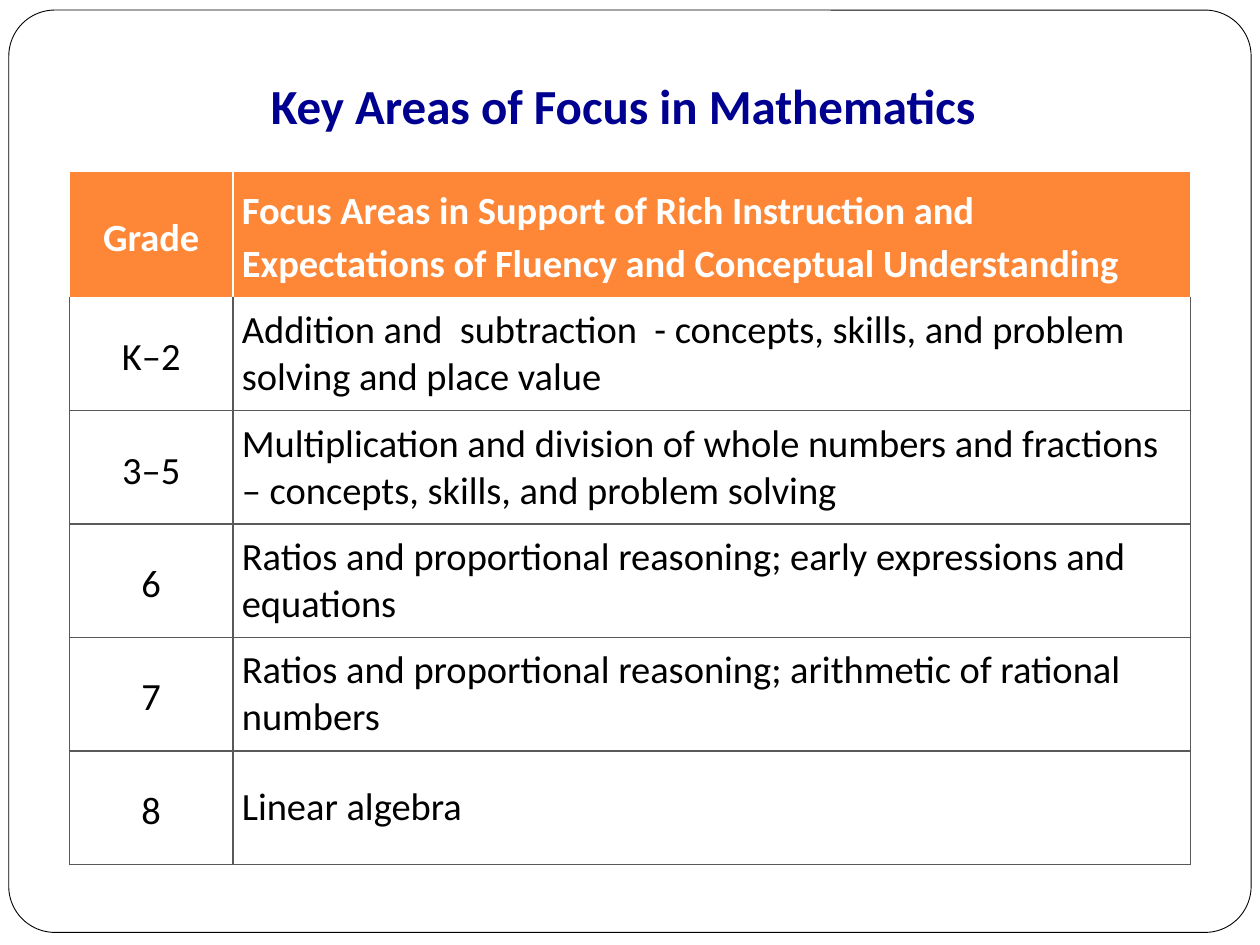
import pptx
import pptx.util
import pptx.dml.color
import pptx.enum.shapes
import pptx.enum.text
from lxml import etree

TITLE = "Key Areas of Focus in Mathematics"
HEADINGS = (
    "Grade",
    "Focus Areas in Support of Rich Instruction and Expectations of Fluency and Conceptual Understanding",
)
FOCUS_AREAS = [
    ("K–2", "Addition and  subtraction  - concepts, skills, and problem solving and place value"),
    ("3–5", "Multiplication and division of whole numbers and fractions – concepts, skills, and problem solving"),
    ("6", "Ratios and proportional reasoning; early expressions and equations"),
    ("7", "Ratios and proportional reasoning; arithmetic of rational numbers"),
    ("8", "Linear algebra"),
]
COLORS = {
    "title": "000090",
    "header": "FE8637",
    "paper": "FFFFFF",
    "ink": "000000",
    "grid": "595959",
}
FONT = "Calibri"
COLUMN_WIDTHS = (1.3, 7.6)
ROW_HEIGHTS = (1.0,) + (0.9,) * len(FOCUS_AREAS)
Inches, Pt = pptx.util.Inches, pptx.util.Pt
ALIGN = pptx.enum.text.PP_ALIGN
ANCHOR = pptx.enum.text.MSO_ANCHOR


def rgb(name):
    return pptx.dml.color.RGBColor.from_string(COLORS[name])


def style_font(font, size, color, bold):
    font.name = FONT
    font.size = Pt(size)
    font.bold = bold
    font.color.rgb = rgb(color)


def set_borders(cell, colors):
    ns = "http://schemas.openxmlformats.org/drawingml/2006/main"
    properties = cell._tc.get_or_add_tcPr()
    for side, color in colors.items():
        border = etree.SubElement(properties, f"{{{ns}}}ln{side}", w=str(Pt(1)))
        fill = etree.SubElement(border, f"{{{ns}}}solidFill")
        etree.SubElement(fill, f"{{{ns}}}srgbClr", val=COLORS[color])


def add_title(slide):
    title = slide.shapes.title
    title.left, title.top = Inches(0.53), Inches(0.55)
    title.width, title.height = Inches(8.83), Inches(0.57)
    frame = title.text_frame
    frame.text = TITLE
    frame.vertical_anchor = ANCHOR.TOP
    frame.auto_size = pptx.enum.text.MSO_AUTO_SIZE.SHAPE_TO_FIT_TEXT
    frame.paragraphs[0].alignment = ALIGN.CENTER
    style_font(frame.paragraphs[0].font, 28, "title", True)


def add_page_frame(slide):
    page = slide.shapes.add_shape(
        pptx.enum.shapes.MSO_SHAPE.ROUNDED_RECTANGLE,
        Inches(0.07), Inches(0.08), Inches(9.86), Inches(7.32),
    )
    page.adjustments[0] = 0.05
    page.shadow.inherit = False
    page.fill.solid()
    page.fill.fore_color.rgb = rgb("paper")
    page.line.color.rgb = rgb("ink")
    page.line.width = Pt(0.5)
    slide.shapes.title.element.addprevious(page.element)


def fill_cell(cell, text, row, column):
    is_header = row == 0
    edge = "paper" if is_header else "grid"
    top = "paper" if row <= 1 else "grid"
    set_borders(cell, {"L": edge, "R": edge, "T": top, "B": "paper" if is_header else "grid"})
    if is_header:
        cell.fill.solid()
        cell.fill.fore_color.rgb = rgb("header")
    else:
        cell.fill.background()
    cell.margin_left = cell.margin_right = Inches(0.07)
    cell.margin_top = cell.margin_bottom = 0
    cell.vertical_anchor = ANCHOR.MIDDLE
    cell.text = text
    paragraph = cell.text_frame.paragraphs[0]
    paragraph.alignment = ALIGN.CENTER if column == 0 else ALIGN.LEFT
    if is_header or column == 0:
        paragraph.line_spacing = 1.15
    style_font(paragraph.font, 22, "paper" if is_header else "ink", is_header)


def add_focus_table(slide):
    rows = [HEADINGS] + FOCUS_AREAS
    table = slide.shapes.add_table(
        len(rows), len(HEADINGS), Inches(0.55), Inches(1.36),
        Inches(sum(COLUMN_WIDTHS)), Inches(sum(ROW_HEIGHTS)),
    ).table
    table.first_row = table.horz_banding = False
    for column, width in zip(table.columns, COLUMN_WIDTHS):
        column.width = Inches(width)
    for row, height in zip(table.rows, ROW_HEIGHTS):
        row.height = Inches(height)
    for r, texts in enumerate(rows):
        for c, text in enumerate(texts):
            fill_cell(table.cell(r, c), text, r, c)


def main():
    deck = pptx.Presentation()
    deck.slide_width, deck.slide_height = Inches(10), Inches(7.5)
    slide = deck.slides.add_slide(deck.slide_layouts.get_by_name("Title Only"))
    add_title(slide)
    add_page_frame(slide)
    add_focus_table(slide)
    deck.save("out.pptx")


if __name__ == "__main__":
    main()
